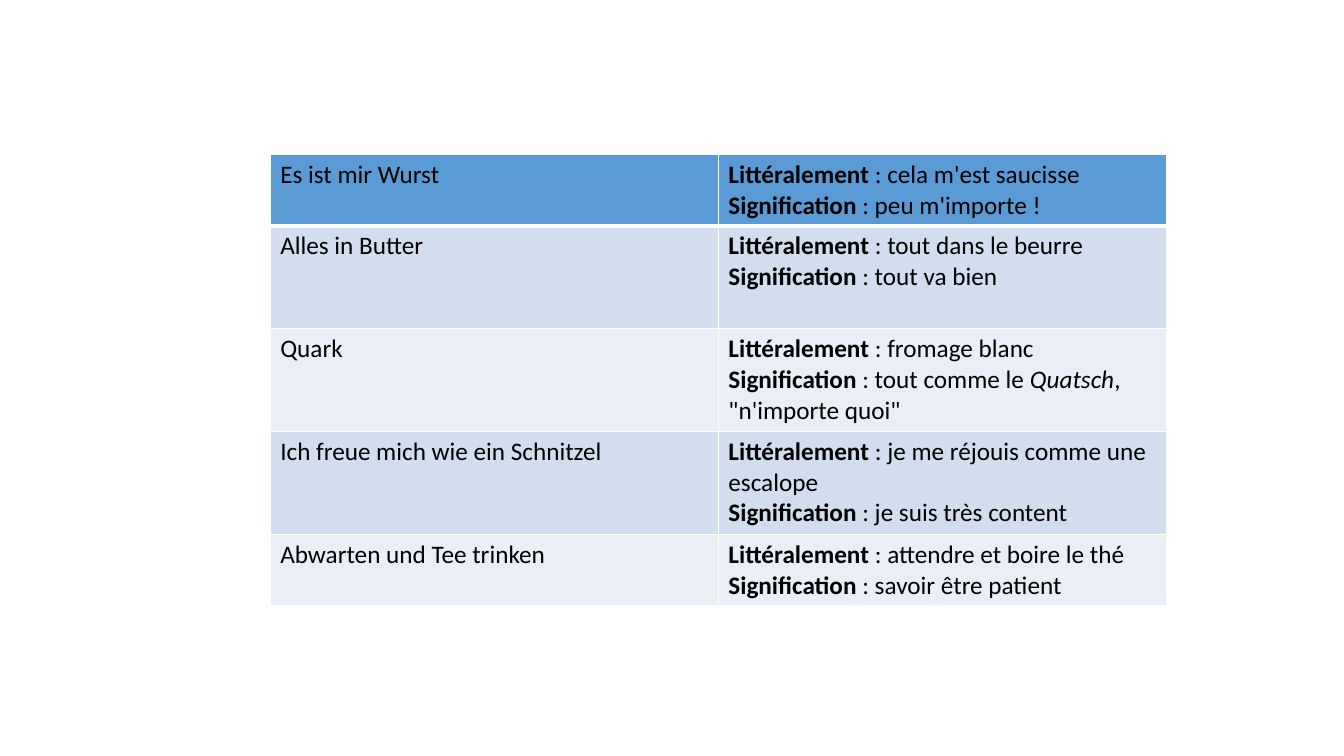
from dataclasses import dataclass

from lxml import etree
from pptx import Presentation
from pptx import util as u
from pptx.dml.color import RGBColor
from pptx.oxml import ns


@dataclass(frozen=True)
class Theme:
    font: str = "Calibri"
    size: int = 18
    ink: str = "000000"
    line: str = "FFFFFF"
    head: str = "5B9BD5"
    bands: tuple = ("EAEFF7", "D2DEEF")
    thin: int = 1
    thick: int = 3


THEME = Theme()

# Idiom, literal sense, meaning (asterisks enclose italics), row height
IDIOMS = [
    ("Es ist mir Wurst", "cela m'est saucisse", "peu m'importe !", 0.71),
    ("Alles in Butter", "tout dans le beurre", "tout va bien", 1.02),
    ("Quark", "fromage blanc",
     "tout comme le *Quatsch*, \"n'importe quoi\"", 1.02),
    ("Ich freue mich wie ein Schnitzel", "je me réjouis comme une escalope",
     "je suis très content", 1.02),
    ("Abwarten und Tee trinken", "attendre et boire le thé",
     "savoir être patient", 0.71),
]


def write(para, words, bold=False, italic=False):
    run = para.add_run()
    run.text = words
    font = run.font
    font.name, font.size = THEME.font, u.Pt(THEME.size)
    font.bold, font.italic = bold, italic
    font.color.rgb = RGBColor.from_string(THEME.ink)


def sense(para, label, words):
    write(para, label + " ", bold=True)
    for i, part in enumerate((": " + words).split("*")):
        write(para, part, italic=i % 2 == 1)


def edge(cell, side, width):
    props = cell._tc.get_or_add_tcPr()
    line = etree.SubElement(props, ns.qn("a:ln" + side), w=str(u.Pt(width)))
    fill = etree.SubElement(line, ns.qn("a:solidFill"))
    etree.SubElement(fill, ns.qn("a:srgbClr"), val=THEME.line)


def paint(cell, row):
    # Borders come before the fill; a thick rule parts the first row
    for side in "LRTB":
        rule = (row, side) in ((0, "B"), (1, "T"))
        edge(cell, side, THEME.thick if rule else THEME.thin)
    cell.fill.solid()
    color = THEME.bands[row % 2] if row else THEME.head
    cell.fill.fore_color.rgb = RGBColor.from_string(color)


def idiom_table(slide, left, top, width):
    height = sum(item[-1] for item in IDIOMS)
    box = [u.Inches(n) for n in (left, top, width, height)]
    table = slide.shapes.add_table(len(IDIOMS), 2, *box).table
    for col in table.columns:
        col.width = u.Inches(width / 2)
    for row, (idiom, literal, meaning, tall) in enumerate(IDIOMS):
        table.rows[row].height = u.Inches(tall)
        name, gloss = table.rows[row].cells
        # Idiom on the left, its two senses on the right
        write(name.text_frame.paragraphs[0], idiom)
        para = gloss.text_frame.paragraphs[0]
        sense(para, "Littéralement", literal)
        para.add_line_break()
        sense(para, "Signification", meaning)
        for cell in (name, gloss):
            paint(cell, row)


def main():
    deck = Presentation()
    deck.slide_width, deck.slide_height = u.Inches(13.33), u.Inches(7.5)
    slide = deck.slides.add_slide(deck.slide_layouts[6])
    idiom_table(slide, 2.68, 1.53, 8.89)
    deck.save("out.pptx")


if __name__ == "__main__":
    main()
